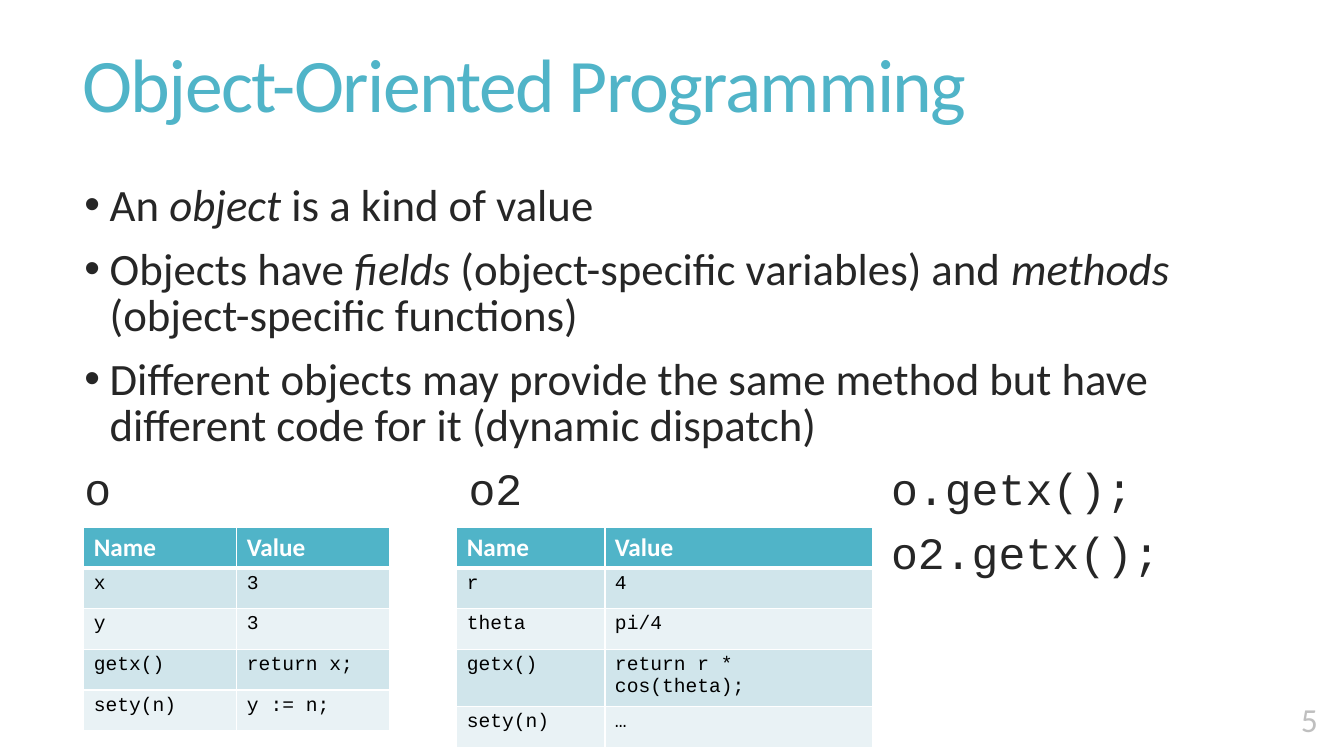
"""Build the slide on objects, with two tables of their fields and methods."""
import pptx
import pptx.dml.color
import pptx.enum.text
import pptx.oxml
import pptx.util

WIDE, HIGH = 13.33, 7.5
TEAL, DARK, WHITE, BLACK, GREY = "50B4C8", "262626", "FFFFFF", "000000", "BFBFBF"
BANDS = "D0E5EB", "E9F2F5"
SANS, MONO = "Calibri", "Courier New"
NS = 'xmlns:a="http://schemas.openxmlformats.org/drawingml/2006/main"'
TABS = 3.81, 8.0

BULLETS = [
    ["An ", "object", " is a kind of value"],
    ["Objects have ", "fields", " (object-specific variables) and ", "methods",
     " (object-specific functions)"],
    ["Different objects may provide the same method but have different code "
     "for it (dynamic dispatch)"],
]
CODE = ["o\to2\to.getx();", "\t\to2.getx();"]
HEAD = "Name", "Value"
POINT = [HEAD, ("x", "3"), ("y", "3"), ("getx()", "return x;"), ("sety(n)", "y := n;")]
POLAR = [HEAD, ("r", "4"), ("theta", "pi/4"),
         ("getx()", "return r * cos(theta);"), ("sety(n)", "…")]


def across(share):
    """Turn a percentage of the slide's width into a length."""
    return pptx.util.Inches(WIDE * share / 100)


def down(share):
    """Turn a percentage of the slide's height into a length."""
    return pptx.util.Inches(HIGH * share / 100)


def paint(code):
    """Turn a hex string into a colour."""
    return pptx.dml.color.RGBColor.from_string(code)


def style(para, name, size, code, bold=False):
    """Set the font of a whole paragraph."""
    font = para.font
    font.name, font.size, font.bold = name, pptx.util.Pt(size), bold
    font.color.rgb = paint(code)


def attach(node, xml):
    """Append a drawing element to a node."""
    node.append(pptx.oxml.parse_xml(xml.replace(" ", f" {NS} ", 1)))


def add_box(slide, left, top, width, height, anchor):
    """Add a wrapping text box and return its frame."""
    box = slide.shapes.add_textbox(across(left), down(top), across(width), down(height))
    frame = box.text_frame
    frame.word_wrap = True
    frame.vertical_anchor = anchor
    return frame


def add_title(slide, text):
    """Add the tightly spaced heading."""
    frame = add_box(slide, 5.4, -0.27, 88.37, 24.13, pptx.enum.text.MSO_ANCHOR.MIDDLE)
    para = frame.paragraphs[0]
    para.text = text
    para.line_spacing = 0.85
    style(para, SANS, 54, TEAL)
    para.runs[0].font._element.set("spc", "-120")


def add_line(frame, parts, name):
    """Add a body line whose every second part is italic."""
    para = frame.paragraphs[0] if not frame.text else frame.add_paragraph()
    para.line_spacing = 0.85
    para.space_before = pptx.util.Pt(13)
    for num, part in enumerate(parts):
        run = para.add_run()
        run.text = part
        if num % 2:
            run.font.italic = True
    style(para, name, 32, DARK)
    return para._p.get_or_add_pPr()


def add_body(slide):
    """Add the bullets and the tabbed lines of code."""
    frame = add_box(slide, 5.55, 23.87, 88.22, 74.53, pptx.enum.text.MSO_ANCHOR.TOP)
    for parts in BULLETS:
        props = add_line(frame, parts, SANS)
        indent = pptx.util.Inches(0.25)
        props.set("marL", str(indent))
        props.set("indent", str(-indent))
        attach(props, '<a:buFont typeface="Arial"/>')
        attach(props, '<a:buChar char="•"/>')
        props.append(props.find(pptx.oxml.ns.qn("a:defRPr")))
    stops = "".join(f'<a:tab pos="{pptx.util.Inches(stop)}" algn="l"/>' for stop in TABS)
    for text in CODE:
        props = add_line(frame, [text], MONO)
        attach(props, f'<a:tabLst >{stops}</a:tabLst>')
        props.append(props.find(pptx.oxml.ns.qn("a:defRPr")))


def add_number(slide, text):
    """Add the page number in the lower right corner."""
    frame = add_box(slide, 82, 89.2, 16.8, 9.2, pptx.enum.text.MSO_ANCHOR.BOTTOM)
    para = frame.paragraphs[0]
    para.text = text
    para.alignment = pptx.enum.text.PP_ALIGN.RIGHT
    style(para, SANS, 24, GREY)


def fill_cell(cell, text, row):
    """Write, colour and border one cell according to its row."""
    cell.text = text
    para = cell.text_frame.paragraphs[0]
    if row == 0:
        style(para, SANS, 18, WHITE, True)
    else:
        style(para, MONO, 14, BLACK)
    props = cell._tc.get_or_add_tcPr()
    for side in "LRTB":
        thick = 3 if (row, side) in ((0, "B"), (1, "T")) else 1
        attach(props, f'<a:ln{side} w="{pptx.util.Pt(thick)}"><a:solidFill>'
                      f'<a:srgbClr val="{WHITE}"/></a:solidFill></a:ln{side}>')
    cell.fill.solid()
    cell.fill.fore_color.rgb = paint(BANDS[(row - 1) % 2] if row else TEAL)


def add_grid(slide, left, widths, rows):
    """Add a banded table of an object's members."""
    tall = 5.39
    table = slide.shapes.add_table(len(rows), len(widths), across(left), down(69.73),
                                   across(sum(widths)), down(tall * len(rows))).table
    for col, width in zip(table.columns, widths):
        col.width = across(width)
    for row, texts in enumerate(rows):
        table.rows[row].height = down(tall)
        for col, text in enumerate(texts):
            fill_cell(table.cell(row, col), text, row)


def main():
    """Build and save the slide."""
    deck = pptx.Presentation()
    deck.slide_width, deck.slide_height = across(100), down(100)
    slide = deck.slides.add_slide(deck.slide_layouts[6])
    add_title(slide, "Object-Oriented Programming")
    add_body(slide)
    add_number(slide, "5")
    add_grid(slide, 6.23, (11.4, 11.4), POINT)
    add_grid(slide, 33.98, (11.03, 19.88), POLAR)
    deck.save("out.pptx")


if __name__ == "__main__":
    main()
